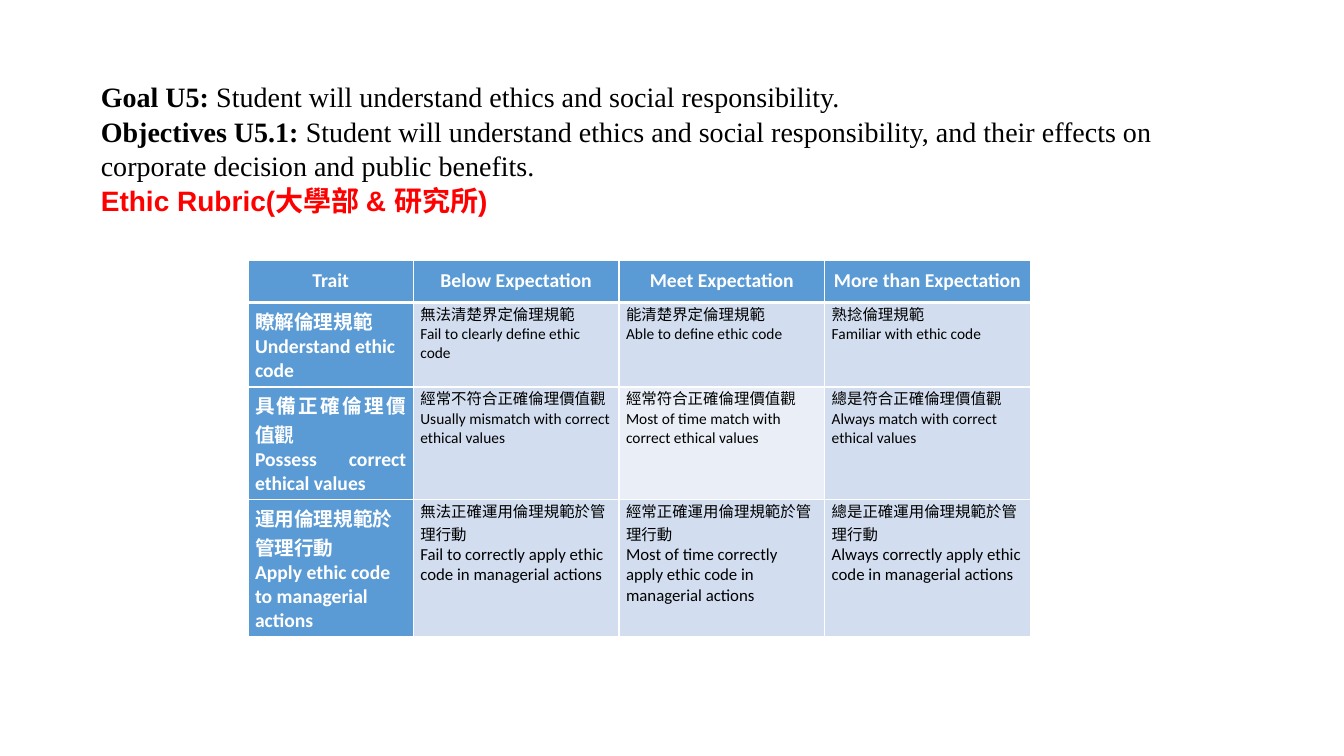
"""Build a slide with an ethics goal and its rubric table."""
from pptx import Presentation
from pptx.dml.color import RGBColor
from pptx.enum.text import MSO_ANCHOR as ANCHOR, MSO_AUTO_SIZE as AUTO, PP_ALIGN as ALIGN
from pptx.oxml.ns import qn
from pptx.util import Emu, Pt
from lxml.etree import SubElement

PX = 9144
BLACK = RGBColor(0x00, 0x00, 0x00)
WHITE = RGBColor(0xFF, 0xFF, 0xFF)
RED = RGBColor(0xFF, 0x00, 0x00)
BLUE = RGBColor(0x5B, 0x9B, 0xD5)
PALE = RGBColor(0xD2, 0xDE, 0xEF)
PALEST = RGBColor(0xEA, 0xEF, 0xF7)

GOAL = [
    [("Goal U5: ", True), ("Student will understand ethics and social responsibility.", False)],
    [("Objectives U5.1: ", True),
     ("Student will understand ethics and social responsibility, and their effects on "
      "corporate decision and public benefits.", False)],
]
RUBRIC_NAME = "Ethic Rubric(大學部 & 研究所)"
HEADINGS = ["Trait", "Below Expectation", "Meet Expectation", "More than Expectation"]
RUBRIC = [
    [("瞭解倫理規範", "Understand ethic code"),
     ("無法清楚界定倫理規範", "Fail to clearly define ethic code"),
     ("能清楚界定倫理規範", "Able to define ethic code"),
     ("熟捻倫理規範", "Familiar with ethic code")],
    [("具備正確倫理價值觀", "Possess correct ethical values"),
     ("經常不符合正確倫理價值觀", "Usually mismatch with correct ethical values"),
     ("經常符合正確倫理價值觀", "Most of time match with correct ethical values"),
     ("總是符合正確倫理價值觀", "Always match with correct ethical values")],
    [("運用倫理規範於管理行動", "Apply ethic code to managerial actions"),
     ("無法正確運用倫理規範於管理行動", "Fail to correctly apply ethic code in managerial actions"),
     ("經常正確運用倫理規範於管理行動",
      "Most of time correctly apply ethic code in managerial actions"),
     ("總是正確運用倫理規範於管理行動", "Always correctly apply ethic code in managerial actions")],
]
COL_WIDTHS = [164, 204, 204, 204]
ROW_HEIGHTS = [42, 84, 112, 136]


def add_text(p, text, font="Calibri", size=14, color=BLACK, bold=False):
    """Add a formatted run to a paragraph."""
    r = p.add_run()
    r.text = text
    f = r.font
    f.name, f.size, f.bold = font, Pt(size), bold
    f.color.rgb = color


class Deck:
    """Hold the presentation, the current slide and its style."""

    def __init__(self, width, height):
        """Start a presentation with one title-only slide."""
        self.prs = Presentation()
        self.prs.slide_width, self.prs.slide_height = Emu(width * PX), Emu(height * PX)
        self.slide = self.prs.slides.add_slide(self.prs.slide_layouts[5])

    def place(self, sp, *box):
        """Set the left, top, width and height of a shape."""
        sp.left, sp.top, sp.width, sp.height = (Emu(v * PX) for v in box)

    def title(self, *box):
        """Fill the title with the goal, the objective and the rubric name."""
        sp = self.slide.shapes.title
        self.place(sp, *box)
        tf = sp.text_frame
        tf.word_wrap, tf.auto_size, tf.vertical_anchor = True, AUTO.NONE, ANCHOR.MIDDLE
        p = tf.paragraphs[0]
        p.alignment, p.line_spacing = ALIGN.LEFT, 1.03
        for line in GOAL:
            for text, bold in line:
                add_text(p, text, font="Times New Roman", size=20, bold=bold)
            p.add_line_break()
        add_text(p, RUBRIC_NAME, font="Arial", size=20, color=RED, bold=True)

    def border(self, cell, side, width):
        """Draw a white line on one side of a cell."""
        ln = SubElement(cell._tc.get_or_add_tcPr(), qn(f"a:ln{side}"), w=str(Pt(width)))
        fill = SubElement(ln, qn("a:solidFill"))
        SubElement(fill, qn("a:srgbClr"), val=str(WHITE))

    def cell(self, cell, lines, fill, sizes, align=ALIGN.LEFT, anchor=ANCHOR.TOP,
             bottom=1, **fmt):
        """Write the lines of a cell and set its borders and fill."""
        cell.margin_left = cell.margin_right = Emu(7 * PX)
        cell.margin_top = cell.margin_bottom = 0
        cell.vertical_anchor = anchor
        for side, width in zip("LRTB", (1, 1, 1, bottom)):
            self.border(cell, side, width)
        cell.fill.solid()
        cell.fill.fore_color.rgb = fill
        tf = cell.text_frame
        for i, (line, size) in enumerate(zip(lines, sizes)):
            p = tf.add_paragraph() if i else tf.paragraphs[0]
            p.alignment = align
            add_text(p, line, size=size, **fmt)

    def rubric(self, left, top):
        """Add the rubric table."""
        box = (left, top, sum(COL_WIDTHS), sum(ROW_HEIGHTS))
        table = self.slide.shapes.add_table(
            len(ROW_HEIGHTS), len(COL_WIDTHS), *(Emu(v * PX) for v in box)).table
        for col, width in zip(table.columns, COL_WIDTHS):
            col.width = Emu(width * PX)
        for row, height in zip(table.rows, ROW_HEIGHTS):
            row.height = Emu(height * PX)
        head = dict(fill=BLUE, sizes=(14, 14), anchor=ANCHOR.MIDDLE, color=WHITE, bold=True)
        for j, heading in enumerate(HEADINGS):
            self.cell(table.cell(0, j), [heading], align=ALIGN.CENTER, bottom=3, **head)
        for i, (trait, *levels) in enumerate(RUBRIC, 1):
            align = ALIGN.JUSTIFY if i == 2 else ALIGN.LEFT
            self.cell(table.cell(i, 0), trait, align=align, **head)
            sizes = (11, 12) if i == len(RUBRIC) else (11, 11)
            for j, level in enumerate(levels, 1):
                fill = PALEST if (i, j) == (2, 2) else PALE
                self.cell(table.cell(i, j), level, fill, sizes)


def main():
    """Build and save the slide."""
    deck = Deck(1333, 750)
    deck.title(90, 74, 1150, 145)
    deck.rubric(246, 258)
    deck.prs.save("out.pptx")


if __name__ == "__main__":
    main()
